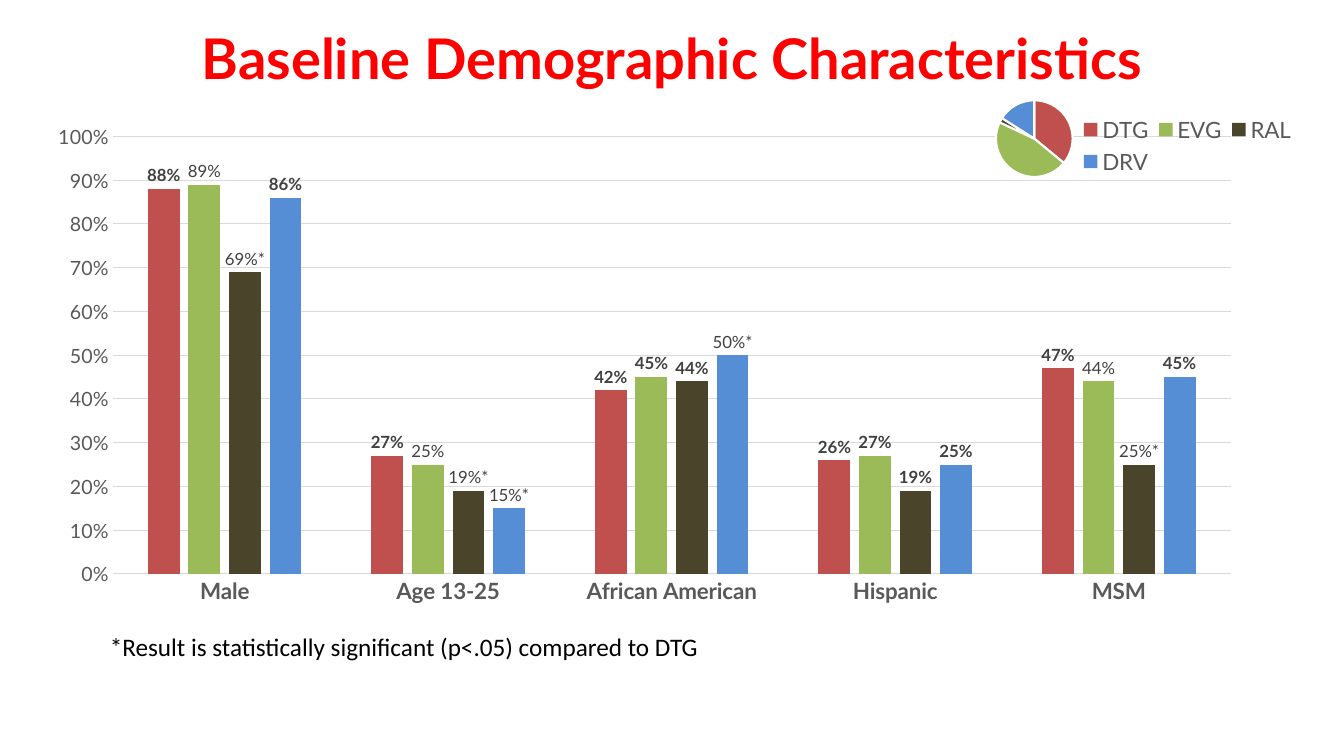
import pptx
import pptx.util
import pptx.chart.data
import pptx.dml.color
import pptx.enum.chart
import pptx.enum.text
import pptx.oxml

COLORS = {
    "title": "FF0000", "note": "000000", "axis": "595959", "label": "404040",
    "grid": "D9D9D9", "edge": "FFFFFF",
    "DTG": "C0504D", "EVG": "9BBB59", "RAL": "4A452A", "DRV": "558ED5",
}
WIDTH = pptx.util.Inches(13.33)
HEIGHT = pptx.util.Inches(7.5)


def style_font(font, color, **values):
    font.color.rgb = pptx.dml.color.RGBColor.from_string(COLORS[color])
    for name, value in values.items():
        setattr(font, name, pptx.util.Pt(value) if name == "size" else value)


def place_inside(parent, index, shares, inner=False):
    for old in parent.findall(pptx.oxml.ns.qn("c:layout")):
        parent.remove(old)
    target = '<c:layoutTarget val="inner"/>' if inner else ""
    modes = '<c:xMode val="edge"/><c:yMode val="edge"/>'
    sizes = "".join(f'<c:{side} val="{share}"/>' for side, share in zip("xywh", shares))
    parent.insert(index, pptx.oxml.parse_xml(
        f'<c:layout {pptx.oxml.ns.nsdecls("c")}><c:manualLayout>'
        f"{target}{modes}{sizes}</c:manualLayout></c:layout>"))


deck = pptx.Presentation()
deck.slide_width, deck.slide_height = WIDTH, HEIGHT
page = deck.slides.add_slide(deck.slide_layouts[5])

title = page.shapes.title
title.left, title.top = int(WIDTH * 0.0615), int(HEIGHT * 0.0213)
title.width, title.height = int(WIDTH * 0.877), int(HEIGHT * 0.108)
title.text_frame.vertical_anchor = pptx.enum.text.MSO_ANCHOR.MIDDLE
para = title.text_frame.paragraphs[0]
para.alignment = pptx.enum.text.PP_ALIGN.CENTER
span = para.add_run()
span.text = "Baseline Demographic Characteristics"
style_font(span.font, "title", name="Lato", size=40, bold=True)

groups = {
    "DTG": [0.88, 0.27, 0.42, 0.26, 0.47],
    "EVG": [0.89, 0.25, 0.45, 0.27, 0.44],
    "RAL": [0.69, 0.19, 0.44, 0.19, 0.25],
    "DRV": [0.86, 0.15, 0.5, 0.25, 0.45],
}
plain_labels = {
    "EVG": {0: "89%", 1: "25%", 4: "44%"},
    "RAL": {0: "69%*", 1: "19%*", 4: "25%*"},
    "DRV": {1: "15%*", 2: "50%*"},
}
column_data = pptx.chart.data.CategoryChartData(number_format="0%")
column_data.categories = ["Male", "Age 13-25", "African American", "Hispanic", "MSM"]
for group, shares in groups.items():
    column_data.add_series(group, shares)
columns = page.shapes.add_chart(
    pptx.enum.chart.XL_CHART_TYPE.COLUMN_CLUSTERED,
    int(WIDTH * 0.033), int(HEIGHT * 0.1187), int(WIDTH * 0.945), int(HEIGHT * 0.704),
    column_data).chart
columns.has_title = False
style_font(columns.font, "note", name="Calibri", size=10)
place_inside(columns._chartSpace.chart.plotArea, 0, (0.054, 0.088, 0.88, 0.822), True)

columns.has_legend = True
legend = columns.legend
legend.position = pptx.enum.chart.XL_LEGEND_POSITION.CORNER
legend.include_in_layout = False
style_font(legend.font, "axis", name="Lato", size=16)
place_inside(legend._element, 1, (0.81, 0.04, 0.18, 0.13))

for axis, size, bold in ((columns.category_axis, 16, True), (columns.value_axis, 14, False)):
    axis.major_tick_mark = axis.minor_tick_mark = pptx.enum.chart.XL_TICK_MARK.NONE
    style_font(axis.tick_labels.font, "axis", name="Lato", size=size, bold=bold)
scale = columns.value_axis
scale.minimum_scale, scale.maximum_scale, scale.major_unit = 0, 1, 0.1
scale.tick_labels.number_format = "0%"
scale.tick_labels.number_format_is_linked = False
scale.format.line.fill.background()
for line in (columns.category_axis.format.line, scale.major_gridlines.format.line):
    line.color.rgb = pptx.dml.color.RGBColor.from_string(COLORS["grid"])
    line.width = pptx.util.Pt(0.75)

plot = columns.plots[0]
plot.gap_width, plot.overlap, plot.vary_by_categories = 219, -27, False
outside = pptx.enum.chart.XL_LABEL_POSITION.OUTSIDE_END
for series in plot.series:
    series.format.fill.solid()
    series.format.fill.fore_color.rgb = pptx.dml.color.RGBColor.from_string(COLORS[series.name])
    series.invert_if_negative = False
    labels = series.data_labels
    for name, value in {"show_value": True, "number_format": "0%",
                        "number_format_is_linked": False, "position": outside}.items():
        setattr(labels, name, value)
    style_font(labels.font, "label", name="Lato", size=12, bold=True)
    for index, text in plain_labels.get(series.name, {}).items():
        label = series.points[index].data_label
        span = label.text_frame.paragraphs[0].add_run()
        span.text = text
        style_font(span.font, "label", name="Lato", size=12, bold=False)
        label.position = outside

note = page.shapes.add_textbox(
    int(WIDTH * 0.0743), int(HEIGHT * 0.829), int(WIDTH * 0.5206), int(HEIGHT * 0.056))
note.text_frame.word_wrap = True
span = note.text_frame.paragraphs[0].add_run()
span.text = "*Result is statistically significant (p<.05) compared to DTG"
style_font(span.font, "note", name="Calibri", size=18)

pie_data = pptx.chart.data.CategoryChartData()
pie_data.categories = ["1", "2", "3", "4"]
pie_data.add_series("Series 1", [36, 46, 2, 16])
pie = page.shapes.add_chart(
    pptx.enum.chart.XL_CHART_TYPE.PIE,
    int(WIDTH * 0.6917), int(HEIGHT * 0.1293), int(WIDTH * 0.1613), int(HEIGHT * 0.108),
    pie_data).chart
pie.has_title = pie.has_legend = False
style_font(pie.font, "note", name="Calibri", size=10)
place_inside(pie._chartSpace.chart.plotArea, 0, (0.268, 0.032, 0.43, 0.939), True)
for index, group in enumerate(groups):
    look = pie.plots[0].series[0].points[index].format
    look.fill.solid()
    look.fill.fore_color.rgb = pptx.dml.color.RGBColor.from_string(COLORS[group])
    look.line.color.rgb = pptx.dml.color.RGBColor.from_string(COLORS["edge"])
    look.line.width = pptx.util.Pt(1.5)

deck.save("out.pptx")
